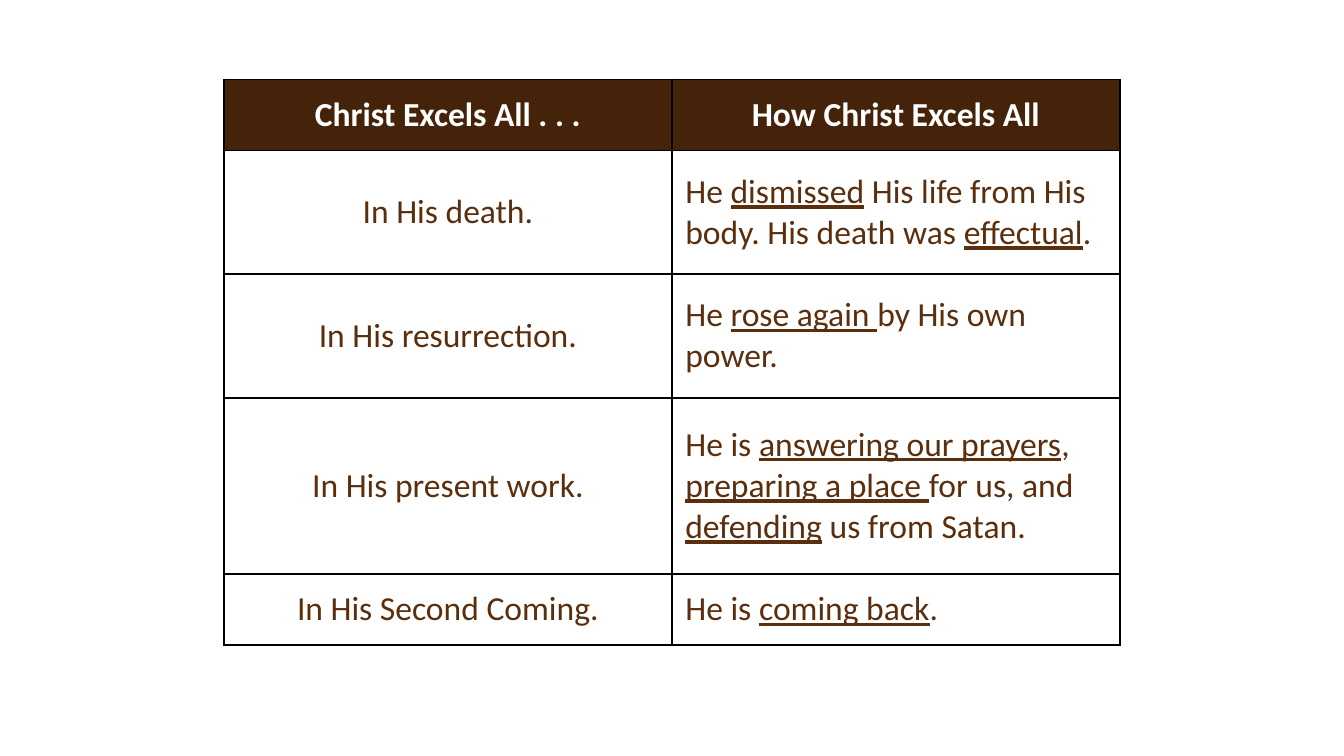
from lxml.etree import SubElement
from pptx import Presentation
from pptx.dml.color import RGBColor
from pptx.enum.text import MSO_ANCHOR, PP_ALIGN
from pptx.oxml.ns import qn
from pptx.util import Inches, Pt

FONT = "Calibri"
WHITE = "FFFFFF"
BLACK = "000000"
HEADER_BROWN = "45230A"
TEXT_BROWN = "5B2F0E"

SLIDE_WIDTH = 10
TABLE_WIDTH = SLIDE_WIDTH * 2 / 3
ROW_HEIGHTS = [0.53, 0.92, 0.92, 1.31, 0.53]
HEADERS = ["Christ Excels All . . .", "How Christ Excels All"]
ROWS = [
    ("In His death.",
     ["He ", "dismissed", " His life from His body. His death was ", "effectual", "."]),
    ("In His resurrection.",
     ["He ", "rose again ", "by His own power."]),
    ("In His present work.",
     ["He is ", "answering our prayers", ", ", "preparing a place ",
      "for us, and ", "defending", " us from Satan."]),
    ("In His Second Coming.",
     ["He is ", "coming back", "."]),
]


def color(value):
    return RGBColor.from_string(value)


def add_borders(cell):
    properties = cell._tc.get_or_add_tcPr()
    for side in ("lnL", "lnR", "lnT", "lnB"):
        line = SubElement(properties, qn(f"a:{side}"), w=str(Pt(1)))
        fill = SubElement(line, qn("a:solidFill"))
        SubElement(fill, qn("a:srgbClr"), val=BLACK)


def write_cell(cell, parts, text_color, alignment, bold=False, fill=None):
    add_borders(cell)
    if fill:
        cell.fill.solid()
        cell.fill.fore_color.rgb = color(fill)
    else:
        cell.fill.background()
    cell.vertical_anchor = MSO_ANCHOR.MIDDLE
    paragraph = cell.text_frame.paragraphs[0]
    paragraph.alignment = alignment
    for index, text in enumerate(parts):
        run = paragraph.add_run()
        run.text = text
        run.font.name = FONT
        run.font.size = Pt(18)
        run.font.bold = bold
        run.font.underline = index % 2 == 1
        run.font.color.rgb = color(text_color)


def add_comparison_table(slide):
    shape = slide.shapes.add_table(
        len(ROW_HEIGHTS), len(HEADERS),
        Inches((SLIDE_WIDTH - TABLE_WIDTH) / 2), Inches(0.59),
        Inches(TABLE_WIDTH), Inches(sum(ROW_HEIGHTS)))
    table = shape.table
    table.horz_banding = False
    for column in table.columns:
        column.width = Inches(TABLE_WIDTH / len(HEADERS))
    for row, height in zip(table.rows, ROW_HEIGHTS):
        row.height = Inches(height)
    for index, header in enumerate(HEADERS):
        write_cell(table.cell(0, index), [header], WHITE, PP_ALIGN.CENTER,
                   bold=True, fill=HEADER_BROWN)
    for index, (topic, explanation) in enumerate(ROWS, start=1):
        write_cell(table.cell(index, 0), [topic], TEXT_BROWN, PP_ALIGN.CENTER)
        write_cell(table.cell(index, 1), explanation, TEXT_BROWN, PP_ALIGN.LEFT)


def main():
    presentation = Presentation()
    presentation.slide_width = Inches(SLIDE_WIDTH)
    presentation.slide_height = Inches(SLIDE_WIDTH * 9 / 16)
    slide = presentation.slides.add_slide(presentation.slide_layouts[6])
    add_comparison_table(slide)
    presentation.save("out.pptx")


if __name__ == "__main__":
    main()
